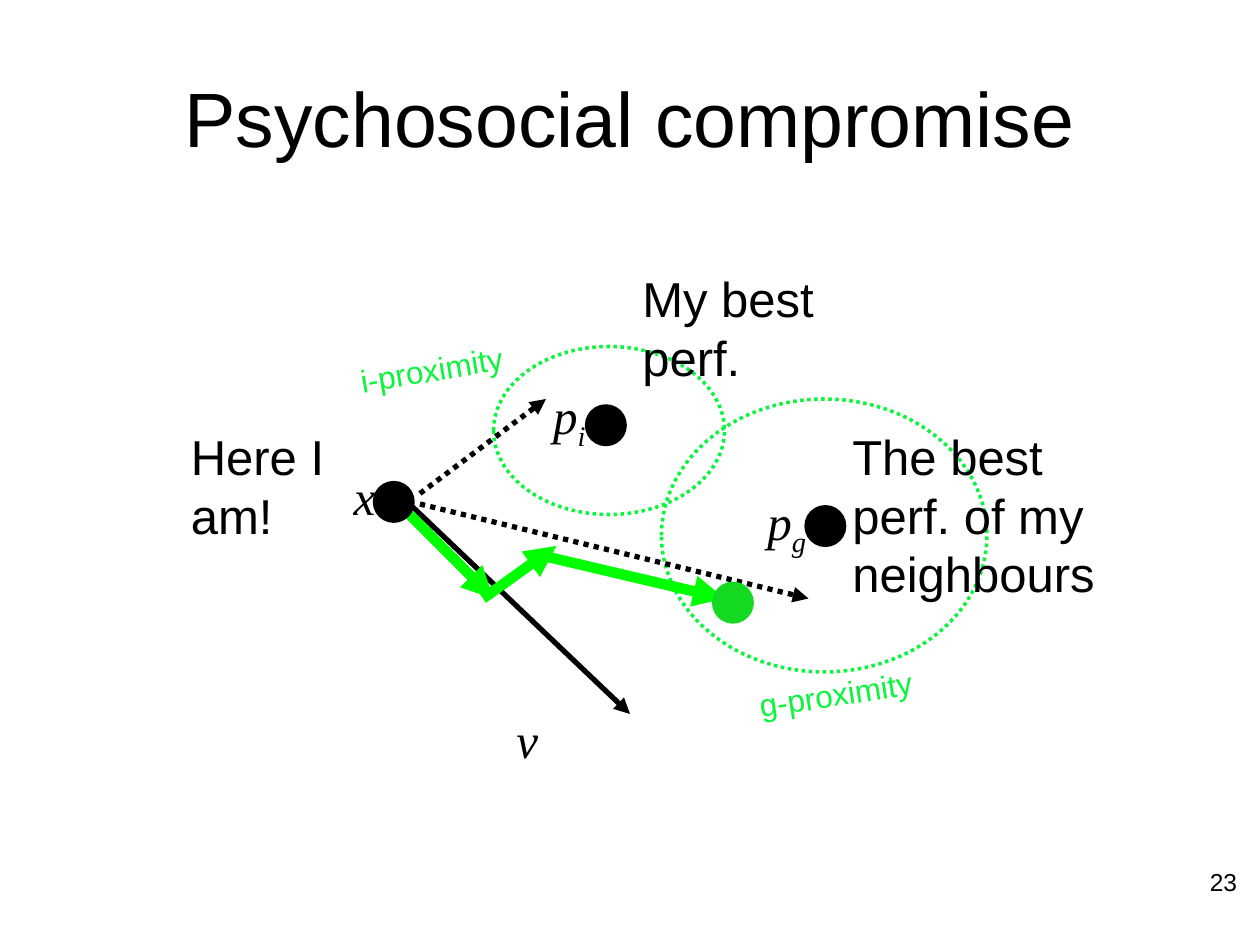
import pptx
import pptx.util
import pptx.dml.color
import pptx.enum.dml
import pptx.enum.shapes
import pptx.enum.text
import pptx.oxml.ns
from lxml import etree

WIDE, HIGH = 10, 7.5
COLS, ROWS = 120, 90
BLACK, LIME, GREEN, LEAF = "000000", "0BF53D", "00FF00", "13D921"
SANS, SERIF = "Arial", "Times New Roman"
DOT = 4
ALIGN = pptx.enum.text.PP_ALIGN
ANCHOR = pptx.enum.text.MSO_ANCHOR


def tint(code):
    return pptx.dml.color.RGBColor.from_string(code)


def spot(box, x, y):
    return (pptx.util.Inches((box[0] + x) * WIDE / COLS),
            pptx.util.Inches((box[1] + y) * HIGH / ROWS))


def place(box, x, y, w, h):
    return *spot(box, x, y), *spot((0, 0), w, h)


def tag(home, name, **attrs):
    return etree.SubElement(home, pptx.oxml.ns.qn(name), attrs)


def write(slide, area, text, size, font=SANS, color=BLACK, sub="",
          align=ALIGN.LEFT, anchor=ANCHOR.TOP, turn=0):
    shape = slide.shapes.add_textbox(*area)
    shape.rotation = turn
    frame = shape.text_frame
    frame.word_wrap = True
    frame.vertical_anchor = anchor
    para = frame.paragraphs[0]
    para.alignment = align
    for part, base in ((text, "0"), (sub, "-25000")):
        if part:
            run = para.add_run()
            run.text = part
            run.font.size = pptx.util.Pt(size)
            run.font.name = font
            run.font.italic = font == SERIF
            run.font.color.rgb = tint(color)
            run._r.get_or_add_rPr().set("baseline", base)


def stroke(line, color, width, dotted):
    line.color.rgb = tint(color)
    line.width = pptx.util.Pt(width)
    if dotted:
        line.dash_style = pptx.enum.dml.MSO_LINE.ROUND_DOT


def oval(slide, area):
    shape = slide.shapes.add_shape(pptx.enum.shapes.MSO_SHAPE.OVAL, *area)
    shape.shadow.inherit = False
    return shape


def ring(slide, area):
    shape = oval(slide, area)
    shape.fill.background()
    stroke(shape.line, LIME, 2, True)


def dot(slide, area, color):
    shape = oval(slide, area)
    shape.fill.solid()
    shape.fill.fore_color.rgb = tint(color)
    shape.line.fill.background()


def arrow(slide, start, end, color, width, dotted):
    link = slide.shapes.add_connector(
        pptx.enum.shapes.MSO_CONNECTOR.STRAIGHT, *start, *end)
    stroke(link.line, color, width, dotted)
    tag(link.line._get_or_add_ln(), "a:tailEnd", type="triangle")
    tag(link._element.spPr, "a:effectLst")


def title(slide, box):
    write(slide, place(box, 0, 0, *box[2:]), "Psychosocial compromise", 44,
          align=ALIGN.CENTER, anchor=ANCHOR.MIDDLE)


def swarm(slide, box):
    for area in ((46, 13, 31, 26), (30, 8, 22, 16)):
        ring(slide, place(box, *area))

    for text, *area in (
        ("Here I am!", 0, 15, 20, 12.4),
        ("The best perf. of my neighbours", 63, 15, 28, 18),
        ("My best perf.", 43, 0, 20, 12.4),
    ):
        write(slide, place(box, *area), text, 28)

    for start, end, color, width, dotted in (
        ((22, 23), (43, 43), BLACK, 3, False),
        ((23, 22), (35, 13), BLACK, 3, True),
        ((23, 23), (60, 32), BLACK, 3, True),
        ((22, 24), (30, 32), GREEN, 6, False),
        ((29, 32), (36, 27), GREEN, 6, False),
        ((35, 28), (52, 32), GREEN, 6, False),
    ):
        arrow(slide, spot(box, *start), spot(box, *end), color, width, dotted)

    for text, sub, x, y, w in (
        ("x", "", 15.5, 18.8, 7),
        ("p", "g", 54.9, 21.2, 11),
        ("p", "i", 34.5, 11.1, 7),
        ("v", "", 31, 42, 4.6),
    ):
        write(slide, place(box, x, y, w, 6.8), text, 28, SERIF, sub=sub)

    for x, y, color in (
        (18.5, 20.8, BLACK),
        (59.6, 23.1, BLACK),
        (38.7, 13.5, BLACK),
        (50.8, 30.4, LEAF),
    ):
        dot(slide, place(box, x, y, DOT, DOT), color)

    for text, x, y, w, turn in (
        ("i-proximity", 16, 5, 27.5, 350.4),
        ("g-proximity", 54, 36, 28.4, 351.2),
    ):
        write(slide, place(box, x, y, w, 8.4), text, 18, color=LIME,
              anchor=ANCHOR.MIDDLE, turn=turn)


def folio(slide, box):
    write(slide, place(box, 0, 0, *box[2:]), "23", 14, align=ALIGN.RIGHT)


def main():
    deck = pptx.Presentation()
    deck.slide_width = pptx.util.Inches(WIDE)
    deck.slide_height = pptx.util.Inches(HIGH)
    slide = deck.slides.add_slide(deck.slide_layouts[6])
    title(slide, (6, 3.6, 108, 15))
    swarm(slide, (17, 25, 91, 50))
    folio(slide, (91, 82, 28, 6.2))
    deck.save("out.pptx")


if __name__ == "__main__":
    main()
